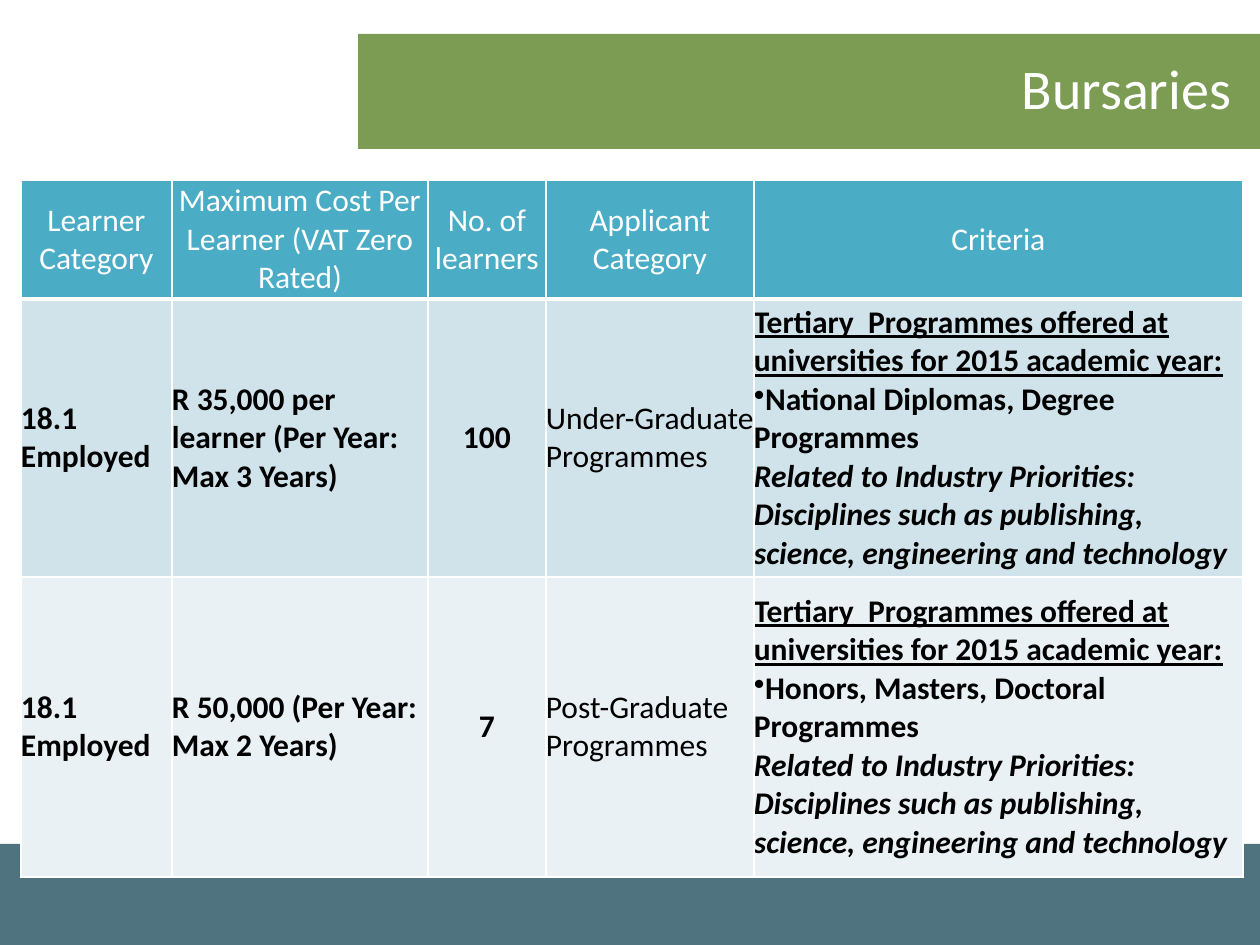
from lxml.etree import SubElement
from pptx import Presentation
from pptx.dml.color import RGBColor
from pptx.enum.shapes import MSO_SHAPE as Shape
from pptx.enum.text import MSO_ANCHOR as Anchor, PP_ALIGN as Align
from pptx.oxml.ns import qn
from pptx.util import Pt

WHITE = RGBColor(0xFF, 0xFF, 0xFF)
BLACK = RGBColor(0x00, 0x00, 0x00)
GREEN = RGBColor(0x7B, 0x9C, 0x52)
SLATE = RGBColor(0x4F, 0x73, 0x7F)
TEAL = RGBColor(0x4B, 0xAC, 0xC6)
PALE_BLUE = RGBColor(0xD0, 0xE3, 0xEA)
PALE_GREY = RGBColor(0xE9, 0xF1, 0xF5)
FONT = "Calibri"


def px(*lengths):
    """Turn pixels (126 to the inch) into a list of EMU."""
    return [round(length * 914400 / 126) for length in lengths]


def set_borders(cell, bottom_width):
    properties = cell._tc.get_or_add_tcPr()
    for side, width in (("L", 1), ("R", 1), ("T", 1), ("B", bottom_width)):
        line = SubElement(properties, qn(f"a:ln{side}"), w=str(Pt(width)))
        fill = SubElement(line, qn("a:solidFill"))
        SubElement(fill, qn("a:srgbClr"), val=str(WHITE))


deck = Presentation()
deck.slide_width, deck.slide_height = px(1260, 945)
page = deck.slides.add_slide(deck.slide_layouts[5])

# Title over its bar, and the footer band
title = page.shapes.title
for color, bounds in ((SLATE, (0, 844, 1260, 101)), (GREEN, (358, 34, 903, 115))):
    band = page.shapes.add_shape(Shape.RECTANGLE, *px(*bounds))
    band.shadow.inherit = False
    band.fill.solid()
    band.fill.fore_color.rgb = color
    band.line.fill.background()
    title.element.addprevious(band.element)

title.left, title.top, title.width, title.height = px(110, 40, 1134, 95)
title.text_frame.text = "Bursaries"
title.text_frame.vertical_anchor = Anchor.MIDDLE
heading = title.text_frame.paragraphs[0]
heading.alignment = Align.RIGHT
heading.runs[0].font.name = FONT
heading.runs[0].font.size = Pt(32)
heading.runs[0].font.color.rgb = WHITE

# Bursary table
INTRO = "Tertiary  Programmes offered at universities for 2015 academic year:"
PRIORITIES = ("Related to Industry Priorities:  Disciplines such as publishing, "
              "science, engineering and technology")
rows = [
    ["Learner Category", "Maximum Cost Per Learner (VAT Zero Rated)",
     "No. of learners", "Applicant Category", "Criteria"],
    ["18.1\nEmployed", "R 35,000 per learner (Per Year: Max 3 Years)", "100",
     "Under-Graduate Programmes",
     f"{INTRO}\nNational Diplomas, Degree Programmes\n{PRIORITIES}"],
    ["18.1\nEmployed", "R 50,000 (Per Year: Max 2 Years)", "7",
     "Post-Graduate Programmes",
     f"{INTRO}\nHonors, Masters, Doctoral Programmes\n{PRIORITIES}"],
]
row_fills = [TEAL, PALE_BLUE, PALE_GREY]
row_heights = px(119, 278, 300)
column_widths = px(151, 256, 118, 208, 489)
COUNT_COLUMN, APPLICANT_COLUMN, CRITERIA_COLUMN = 2, 3, 4

table = page.shapes.add_table(len(rows), len(column_widths), *px(21, 180, 1222, 697)).table
for column, width in zip(table.columns, column_widths):
    column.width = width
for row, height in zip(table.rows, row_heights):
    row.height = height

for r, texts in enumerate(rows):
    is_header = r == 0
    for c, text in enumerate(texts):
        cell = table.cell(r, c)
        set_borders(cell, 3 if is_header else 1)
        cell.fill.solid()
        cell.fill.fore_color.rgb = row_fills[r]
        cell.margin_left = cell.margin_right = cell.margin_top = cell.margin_bottom = 0
        cell.vertical_anchor = Anchor.MIDDLE
        cell.text_frame.text = text
        for p, para in enumerate(cell.text_frame.paragraphs):
            centred = is_header or c == COUNT_COLUMN
            para.alignment = Align.CENTER if centred else Align.LEFT
            is_criteria = c == CRITERIA_COLUMN and not is_header
            if is_criteria and p == 1:
                properties = para._p.get_or_add_pPr()
                properties.set("marL", "0")
                properties.set("indent", "0")
                SubElement(properties, qn("a:buChar"), char="•")
            font = para.runs[0].font
            font.name = FONT
            font.size = Pt(18)
            font.color.rgb = WHITE if is_header else BLACK
            font.bold = not is_header and c != APPLICANT_COLUMN
            font.underline = is_criteria and p == 0
            font.italic = is_criteria and p == 2

deck.save("out.pptx")
